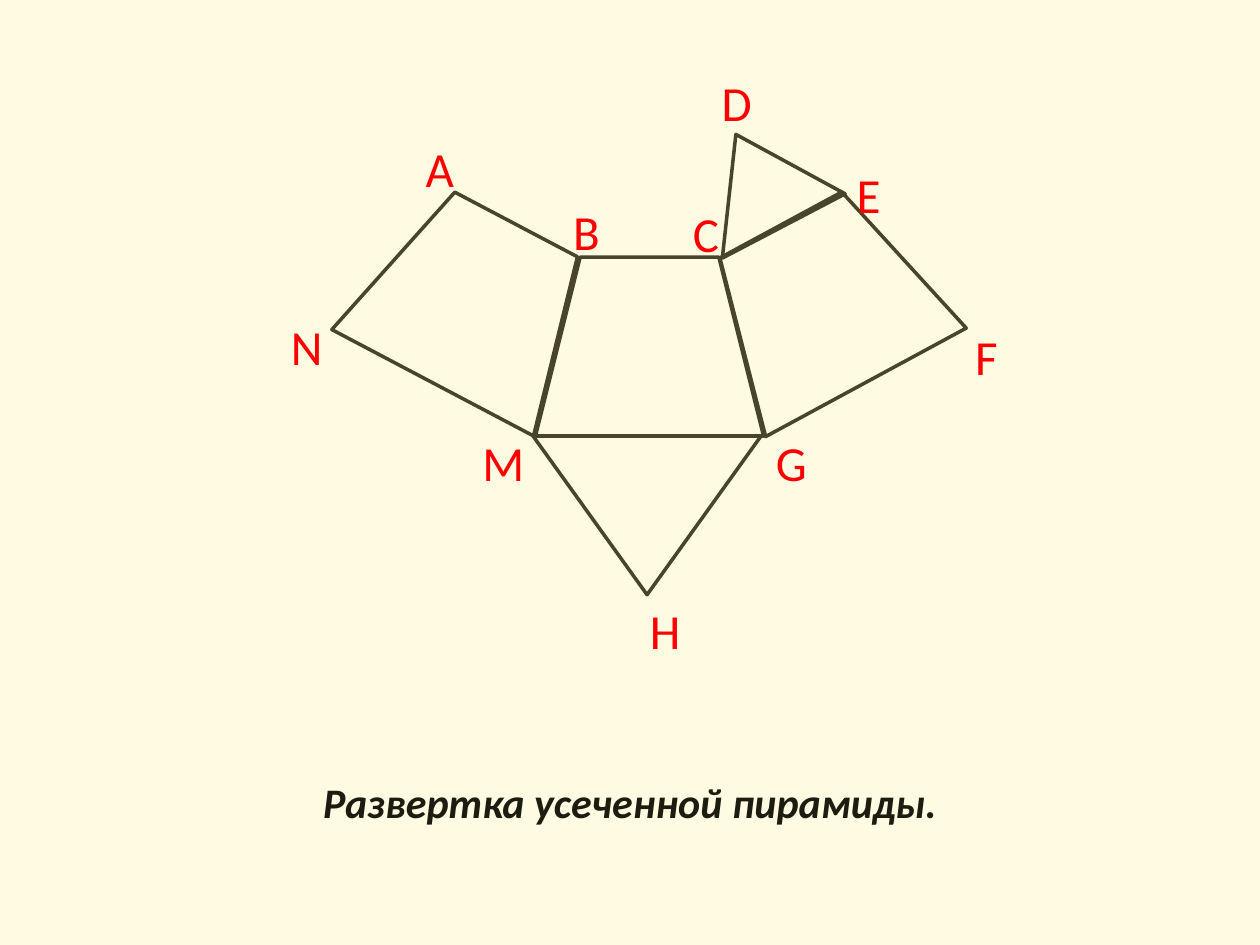
from dataclasses import dataclass

from pptx import Presentation
from pptx.dml.color import RGBColor
from pptx.enum import shapes, text
from pptx.util import Inches, Pt


@dataclass(frozen=True)
class Theme:
    background: RGBColor = RGBColor(0xFE, 0xFB, 0xE2)
    outline: RGBColor = RGBColor(0x4A, 0x45, 0x2A)
    vertex: RGBColor = RGBColor(0xFF, 0x00, 0x00)
    caption: RGBColor = RGBColor(0x1E, 0x1C, 0x11)
    font: str = "Calibri"
    vertex_size: Pt = Pt(28)
    caption_size: Pt = Pt(24)
    outline_width: Pt = Pt(2)


@dataclass(frozen=True)
class Face:
    kind: shapes.MSO_SHAPE
    left: float
    top: float
    width: float
    height: float
    rotation: float = 0


@dataclass(frozen=True)
class Label:
    wording: str
    left: float
    top: float
    width: float
    height: float = 0.57


THEME = Theme()
SIDE = shapes.MSO_SHAPE.TRAPEZOID
BASE = shapes.MSO_SHAPE.ISOSCELES_TRIANGLE
SIDE_SIZE = (1.81, 1.42)

FACES = [
    Face(SIDE, 4.25, 2.04, *SIDE_SIZE),
    Face(SIDE, 2.86, 1.7, *SIDE_SIZE, rotation=27.8),
    Face(SIDE, 5.63, 1.7, *SIDE_SIZE, rotation=331.6),
    Face(BASE, 4.23, 3.46, 1.81, 1.26, rotation=180),
    Face(BASE, 5.48, 1.02, 1.1, 0.82, rotation=332.4),
]
VERTICES = [
    Label("A", 3.28, 1.05, 0.43),
    Label("B", 4.45, 1.55, 0.42),
    Label("C", 5.4, 1.57, 0.41),
    Label("D", 5.63, 0.53, 0.44),
    Label("E", 6.7, 1.26, 0.39),
    Label("F", 7.64, 2.54, 0.38),
    Label("G", 6.06, 3.38, 0.45),
    Label("H", 5.06, 4.72, 0.45),
    Label("M", 3.73, 3.38, 0.54),
    Label("N", 2.21, 2.46, 0.46),
]
CAPTION = Label("Развертка усеченной пирамиды.", 0.5, 6.11, 9, 0.59)

VERTEX_FONT = {"name": THEME.font, "size": THEME.vertex_size}
CAPTION_FONT = {"name": THEME.font, "size": THEME.caption_size,
                "bold": True, "italic": True}


def bounds(item: Face | Label) -> list[Inches]:
    return [Inches(n) for n in (item.left, item.top, item.width, item.height)]


def draw_face(slide, face: Face) -> None:
    shape = slide.shapes.add_shape(face.kind, *bounds(face))
    shape.rotation = face.rotation
    shape.shadow.inherit = False
    shape.fill.background()
    shape.line.color.rgb = THEME.outline
    shape.line.width = THEME.outline_width


def draw_label(slide, label: Label, color: RGBColor, font_format: dict,
               alignment: text.PP_ALIGN, wrap: bool) -> None:
    frame = slide.shapes.add_textbox(*bounds(label)).text_frame
    frame.word_wrap = wrap
    if not wrap:
        frame.auto_size = text.MSO_AUTO_SIZE.SHAPE_TO_FIT_TEXT
    paragraph = frame.paragraphs[0]
    paragraph.alignment = alignment
    run = paragraph.add_run()
    run.text = label.wording
    run.font.color.rgb = color
    for name, value in font_format.items():
        setattr(run.font, name, value)


def main() -> None:
    presentation = Presentation()
    presentation.slide_width = Inches(10)
    presentation.slide_height = Inches(7.5)
    slide = presentation.slides.add_slide(presentation.slide_layouts[6])
    slide.background.fill.solid()
    slide.background.fill.fore_color.rgb = THEME.background

    draw_label(slide, CAPTION, THEME.caption, CAPTION_FONT,
               text.PP_ALIGN.CENTER, wrap=True)
    for face in FACES:
        draw_face(slide, face)
    for vertex in VERTICES:
        draw_label(slide, vertex, THEME.vertex, VERTEX_FONT,
                   text.PP_ALIGN.LEFT, wrap=False)

    presentation.save("out.pptx")


if __name__ == "__main__":
    main()
